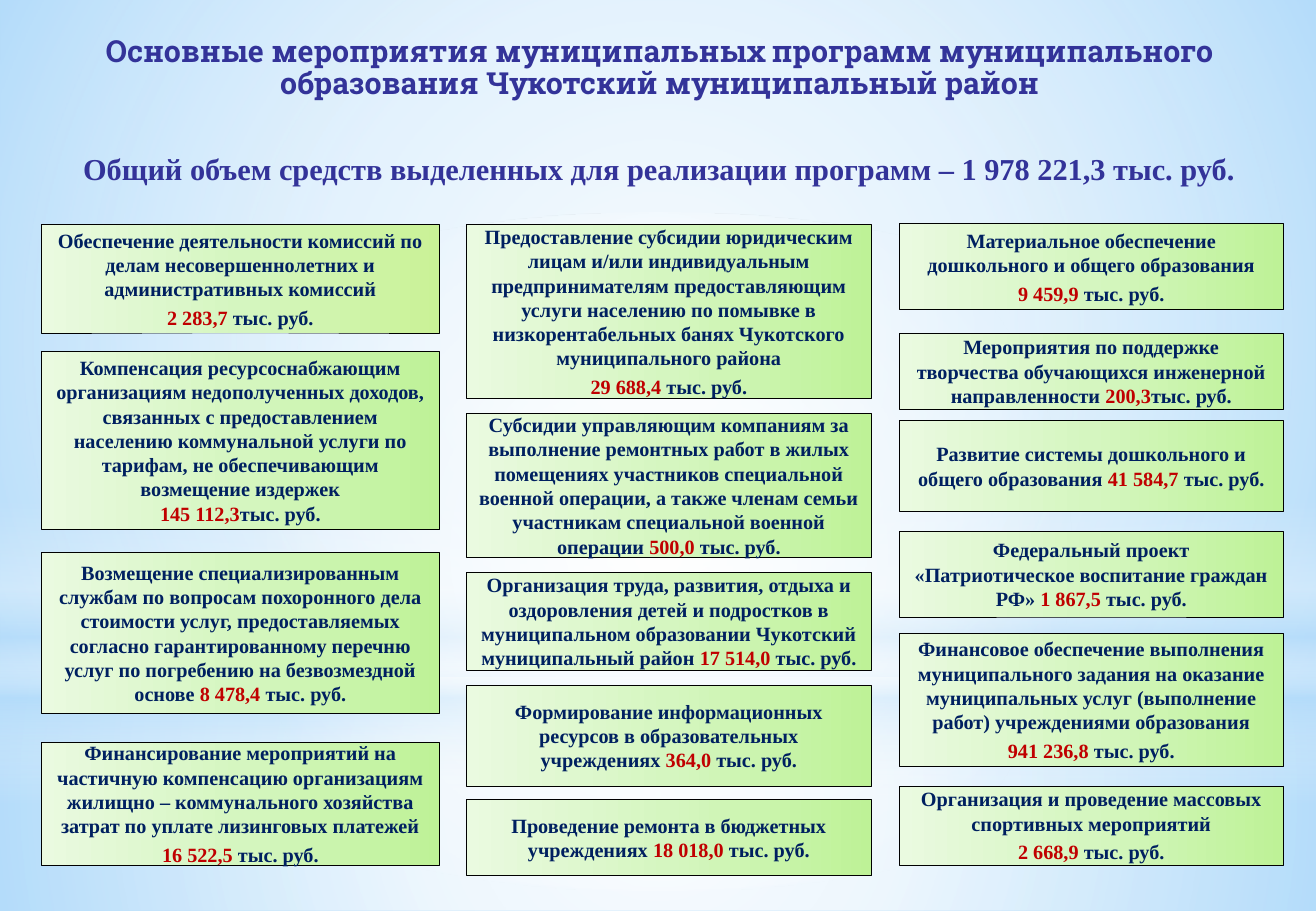
from pptx import Presentation
from pptx.dml.color import RGBColor
from pptx.enum import shapes, text
from pptx.oxml import parse_xml
from pptx.oxml.ns import nsdecls, qn
from pptx.util import Inches, Pt

SKY = RGBColor(0xB4, 0xDC, 0xFA)
WHITE = RGBColor(0xFF, 0xFF, 0xFF)
BLACK = RGBColor(0x00, 0x00, 0x00)
INDIGO = RGBColor(0x33, 0x33, 0x99)
NAVY = RGBColor(0x00, 0x20, 0x60)
RED = RGBColor(0xC0, 0x00, 0x00)
LIME = RGBColor(0xCA, 0xF2, 0x97)
GREEN = RGBColor(0xBE, 0xF2, 0x97)
MID_GREEN = RGBColor(0xD5, 0xF6, 0xC0)
PALE_GREEN = RGBColor(0xEA, 0xFA, 0xE0)

SERIF = "Times New Roman"
TITLE = ("Основные мероприятия муниципальных программ муниципального "
         "образования Чукотский муниципальный район")
TOTAL = "Общий объем средств выделенных для реализации программ – 1 978 221,3 тыс. руб."
UNIT = "тыс. руб."

# Where the amount goes: in the running text, or on its own line with a gap in points
INLINE, OWN_LINE, OWN_LINE_TIGHT = None, 2.6, 0

# Columns: left, width, programmes (top, height, name, amount, amount placement)
COLUMNS = [
    (0.34, 3.28, [
        (1.85, 0.89, "Обеспечение деятельности комиссий по делам несовершеннолетних и "
         "административных комиссий", "2 283,7 ", OWN_LINE),
        (2.89, 1.47, "Компенсация ресурсоснабжающим организациям недополученных доходов, "
         "связанных с предоставлением населению коммунальной услуги по тарифам, "
         "не обеспечивающим возмещение издержек", "145 112,3", OWN_LINE_TIGHT),
        (4.55, 1.32, "Возмещение специализированным службам по вопросам похоронного дела "
         "стоимости услуг, предоставляемых согласно гарантированному перечню услуг "
         "по погребению на безвозмездной основе ", "8 478,4 ", INLINE),
        (6.11, 1.01, "Финансирование мероприятий на частичную компенсацию организациям "
         "жилищно – коммунального хозяйства затрат по уплате лизинговых платежей",
         "16 522,5 ", OWN_LINE),
    ]),
    (3.84, 3.34, [
        (1.85, 1.43, "Предоставление субсидии юридическим лицам и/или индивидуальным "
         "предпринимателям предоставляющим услуги населению по помывке в "
         "низкорентабельных банях Чукотского муниципального района",
         "29 688,4 ", OWN_LINE),
        (3.4, 1.19, "Субсидии управляющим компаниям за выполнение ремонтных работ в жилых "
         "помещениях участников специальной военной операции, а также членам семьи "
         "участникам специальной военной операции ", "500,0 ", INLINE),
        (4.71, 0.81, "Организация труда, развития, отдыха и оздоровления детей и "
         "подростков в муниципальном образовании Чукотский муниципальный район ",
         "17 514,0 ", INLINE),
        (5.64, 0.83, "Формирование информационных ресурсов в образовательных учреждениях ",
         "364,0 ", INLINE),
        (6.58, 0.63, "Проведение ремонта в бюджетных учреждениях ", "18 018,0 ", INLINE),
    ]),
    (7.41, 3.16, [
        (1.84, 0.71, "Материальное обеспечение дошкольного и общего образования",
         "9 459,9 ", OWN_LINE),
        (2.74, 0.63, "Мероприятия по поддержке творчества обучающихся инженерной "
         "направленности ", "200,3", INLINE),
        (3.46, 0.75, "Развитие системы дошкольного и общего образования ",
         "41 584,7 ", INLINE),
        (4.37, 0.71, "Федеральный проект «Патриотическое воспитание граждан РФ» ",
         "1 867,5 ", INLINE),
        (5.21, 1.1, "Финансовое обеспечение выполнения муниципального задания на оказание "
         "муниципальных услуг (выполнение работ) учреждениями образования",
         "941 236,8 ", OWN_LINE),
        (6.47, 0.65, "Организация и проведение массовых спортивных мероприятий",
         "2 668,9 ", OWN_LINE),
    ]),
]

# Backdrop: shape, top, height, stops (position %, colour, opacity %), angle (None = radial)
RECT, OVAL = shapes.MSO_SHAPE.RECTANGLE, shapes.MSO_SHAPE.OVAL
BACKDROP = [
    (RECT, 5.58, 1.92, [(0, WHITE, 91), (37, WHITE, 76), (100, SKY, 79)], None),
    (RECT, 0, 5.58, [(0, WHITE, 89), (48, WHITE, 62), (100, SKY, 79)], None),
    (RECT, 4.12, 2.5, [(0, WHITE, 0), (29, WHITE, 30), (45, SKY, 40), (55, WHITE, 26),
                       (65, SKY, 60), (100, WHITE, 0)], 90),
    (OVAL, 1.75, 5.58, [(0, WHITE, 100), (56, WHITE, 0)], None),
]
WIDTH, HEIGHT = 10.84, 7.5


def add_gradient_shape(s, kind, box, stops, angle):
    sp = s.shapes.add_shape(kind, *map(Inches, box))
    sp.shadow.inherit = False
    sp.line.fill.background()
    sp.fill.background()
    marks = "".join(
        f'<a:gs pos="{pos * 1000}"><a:srgbClr val="{color}">'
        f'<a:alpha val="{alpha * 1000}"/></a:srgbClr></a:gs>'
        for pos, color, alpha in stops)
    if angle is None:
        way = ('<a:path path="circle"><a:fillToRect l="50000" t="50000" '
               'r="50000" b="50000"/></a:path>')
    else:
        way = f'<a:lin ang="{angle * 60000}" scaled="0"/>'
    grad = parse_xml(f'<a:gradFill {nsdecls("a")} rotWithShape="1">'
                     f'<a:gsLst>{marks}</a:gsLst>{way}</a:gradFill>')
    props = sp._element.spPr
    props.replace(props.find(qn("a:noFill")), grad)
    return sp


def add_run(p, words, size, color, font=SERIF):
    p.alignment = text.PP_ALIGN.CENTER
    r = p.add_run()
    r.text = words
    r.font.name, r.font.size, r.font.bold = font, Pt(size), True
    r.font.color.rgb = color


def set_frame(tf, wrap=True):
    tf.word_wrap = wrap
    tf.auto_size = text.MSO_AUTO_SIZE.NONE
    tf.vertical_anchor = text.MSO_ANCHOR.MIDDLE


def add_programme(s, box, name, amount, gap, edge):
    stops = [(0, edge, 100), (50, MID_GREEN, 100), (100, PALE_GREEN, 100)]
    sp = add_gradient_shape(s, RECT, box, stops, 180)
    sp.line.color.rgb = BLACK
    sp.line.width = Pt(0.25)
    tf = sp.text_frame
    set_frame(tf)
    p = tf.paragraphs[0]
    add_run(p, name, 12, NAVY)
    if gap is not INLINE:
        p = tf.add_paragraph()
        p.space_before = Pt(gap)
    add_run(p, amount, 12, RED)
    add_run(p, UNIT, 12, NAVY)


def main():
    prs = Presentation()
    prs.slide_width, prs.slide_height = Inches(WIDTH), Inches(HEIGHT)
    s = prs.slides.add_slide(prs.slide_layouts[5])

    # Backdrop
    s.background.fill.solid()
    s.background.fill.fore_color.rgb = SKY
    for kind, top, height, stops, angle in BACKDROP:
        add_gradient_shape(s, kind, (0, top, WIDTH, height), stops, angle)

    # Title, raised above the backdrop
    title = s.shapes.title
    s.shapes._spTree.append(title._element)
    title.left, title.top, title.width, title.height = map(Inches, (0.56, 0.28, 9.75, 0.57))
    tf = title.text_frame
    set_frame(tf)
    tf.margin_left = tf.margin_right = tf.margin_top = tf.margin_bottom = 0
    tf.paragraphs[0].line_spacing = 0.9
    add_run(tf.paragraphs[0], TITLE, 18, INDIGO, "Roboto Slab")

    # Total amount
    total = s.shapes.add_textbox(*map(Inches, (0.39, 1.21, 10.08, 0.36)))
    set_frame(total.text_frame, wrap=False)
    add_run(total.text_frame.paragraphs[0], TOTAL, 18, INDIGO)

    # Programmes; the very first box has a yellower edge
    edge = LIME
    for left, width, programmes in COLUMNS:
        for top, height, name, amount, gap in programmes:
            add_programme(s, (left, top, width, height), name, amount, gap, edge)
            edge = GREEN

    prs.save("out.pptx")


if __name__ == "__main__":
    main()
